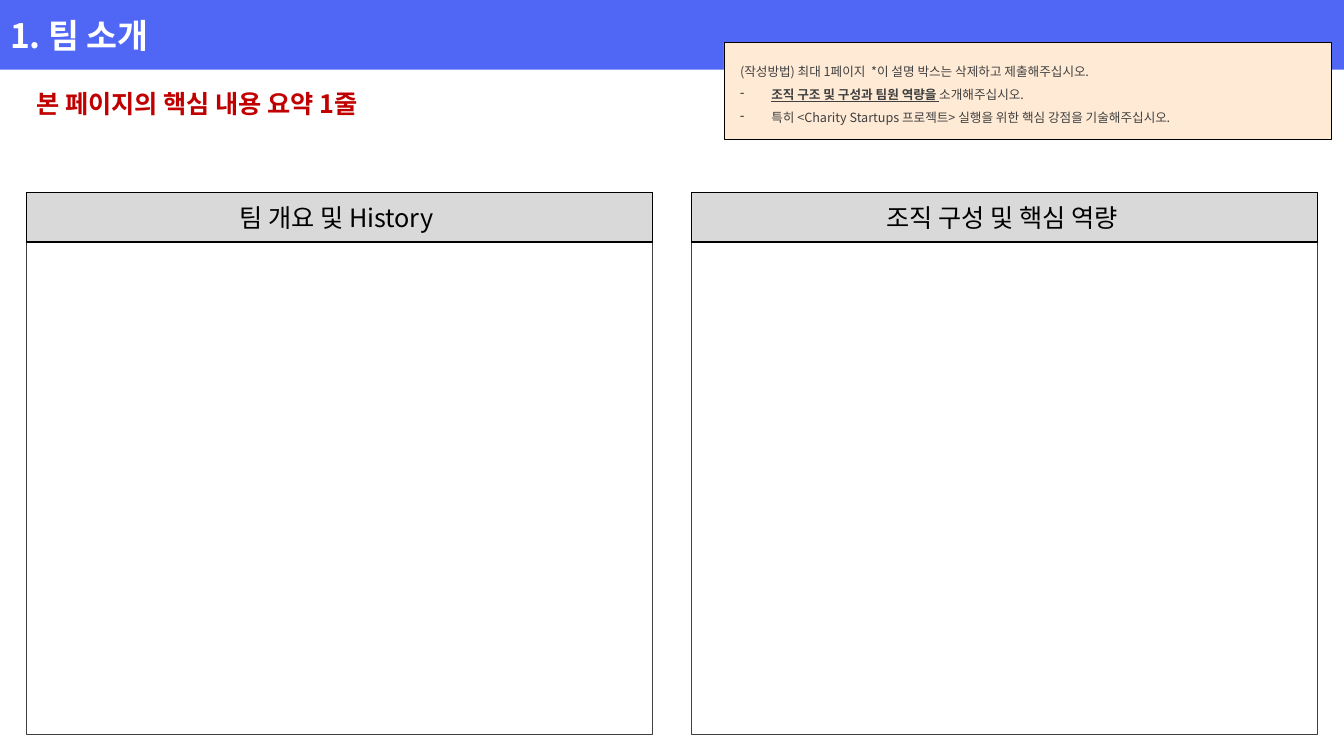
from lxml.etree import SubElement
from pptx import Presentation
from pptx.dml.color import RGBColor
from pptx.enum.shapes import MSO_SHAPE as Shape
from pptx.enum.text import MSO_ANCHOR as Anchor, MSO_AUTO_SIZE as AutoSize, PP_ALIGN as Align
from pptx.oxml.ns import qn
from pptx.util import Pt

SCALE = 9144
FONT = "Noto Sans CJK KR"
WHITE = RGBColor(0xFF, 0xFF, 0xFF)
BLACK = RGBColor(0, 0, 0)
BLUE = RGBColor(0x50, 0x67, 0xF5)
PEACH = RGBColor(0xFF, 0xEA, 0xD5)
GRAY = RGBColor(0xD9, 0xD9, 0xD9)
DARK = RGBColor(0x40, 0x40, 0x40)
RED = RGBColor(0xC0, 0, 0)

PAGE_WIDTH, PAGE_HEIGHT = 1333, 750
MARGIN = 26
PANEL_WIDTH, PANEL_GAP = 621, 39
PANELS = ["팀 개요 및 History", "조직 구성 및 핵심 역량"]
GUIDE = [
    [("(작성방법) 최대 1페이지  *이 설명 박스는 삭제하고 제출해주십시오.", False)],
    [("조직 구조 및 구성과 팀원 역량을 ", True), ("소개해주십시오.", False)],
    [("특히 <Charity Startups 프로젝트> 실행을 위한 핵심 강점을 기술해주십시오.", False)],
]


def px(length):
    return round(length * SCALE)


def place(shape, box):
    shape.left, shape.top, shape.width, shape.height = map(px, box)


def style(para, size, color, bold=False, align=Align.LEFT, spacing=1.0):
    para.alignment = align
    para.line_spacing = spacing
    font = para.font
    font.size, font.bold, font.name = Pt(size), bold, FONT
    font.color.rgb = color
    SubElement(para._p.pPr.find(qn("a:defRPr")), qn("a:ea"), typeface=FONT)


def add_bullet(para, indent):
    properties = para._p.get_or_add_pPr()
    properties.set("marL", str(px(indent)))
    properties.set("indent", str(-px(indent)))
    SubElement(properties, qn("a:buChar"), char="-")


def add_box(page, box, line, weight, fill=None):
    shape = page.shapes.add_shape(Shape.RECTANGLE, *map(px, box))
    shape.shadow.inherit = False
    if fill is None:
        shape.fill.background()
    else:
        shape.fill.solid()
        shape.fill.fore_color.rgb = fill
    shape.line.color.rgb = line
    shape.line.width = Pt(weight)
    frame = shape.text_frame
    frame.word_wrap = True
    frame.vertical_anchor = Anchor.MIDDLE
    return shape


def add_title(page, box):
    title = page.shapes.title
    place(title, box)
    title.fill.solid()
    title.fill.fore_color.rgb = BLUE
    frame = title.text_frame
    frame.text = "1. 팀 소개"
    frame.auto_size = AutoSize.NONE
    frame.vertical_anchor = Anchor.MIDDLE
    style(frame.paragraphs[0], 24, WHITE, bold=True)


def add_guide(page, box):
    frame = add_box(page, box, BLACK, 0.25, PEACH).text_frame
    frame.margin_left = px(16)
    for index, spans in enumerate(GUIDE):
        para = frame.add_paragraph() if index else frame.paragraphs[0]
        if index:
            add_bullet(para, 31)
        style(para, 9, DARK, spacing=1.5)
        for text, stressed in spans:
            span = para.add_run()
            span.text = text
            if stressed:
                span.font.bold = span.font.underline = True


def add_summary(page, box):
    frame = page.shapes.add_textbox(*map(px, box)).text_frame
    frame.word_wrap = True
    frame.vertical_anchor = Anchor.MIDDLE
    frame.text = "본 페이지의 핵심 내용 요약 1줄"
    style(frame.paragraphs[0], 18, RED, bold=True, spacing=1.5)


def add_panel(page, box, heading):
    left, top, width, height = box
    add_box(page, box, DARK, 1)
    frame = add_box(page, (left, top, width, 49), BLACK, 1, GRAY).text_frame
    frame.text = heading + " "
    style(frame.paragraphs[0], 18, BLACK, align=Align.CENTER)


def main():
    deck = Presentation()
    deck.slide_width, deck.slide_height = px(PAGE_WIDTH), px(PAGE_HEIGHT)
    page = deck.slides.add_slide(deck.slide_layouts.get_by_name("Title Only"))
    add_title(page, (0, 0, PAGE_WIDTH, 69))
    add_guide(page, (718, 42, 602, 96))
    add_summary(page, (MARGIN, 69, PAGE_WIDTH - 2 * MARGIN, 53))
    for index, heading in enumerate(PANELS):
        left = MARGIN + index * (PANEL_WIDTH + PANEL_GAP)
        add_panel(page, (left, 191, PANEL_WIDTH, 538), heading)
    deck.save("out.pptx")


if __name__ == "__main__":
    main()
